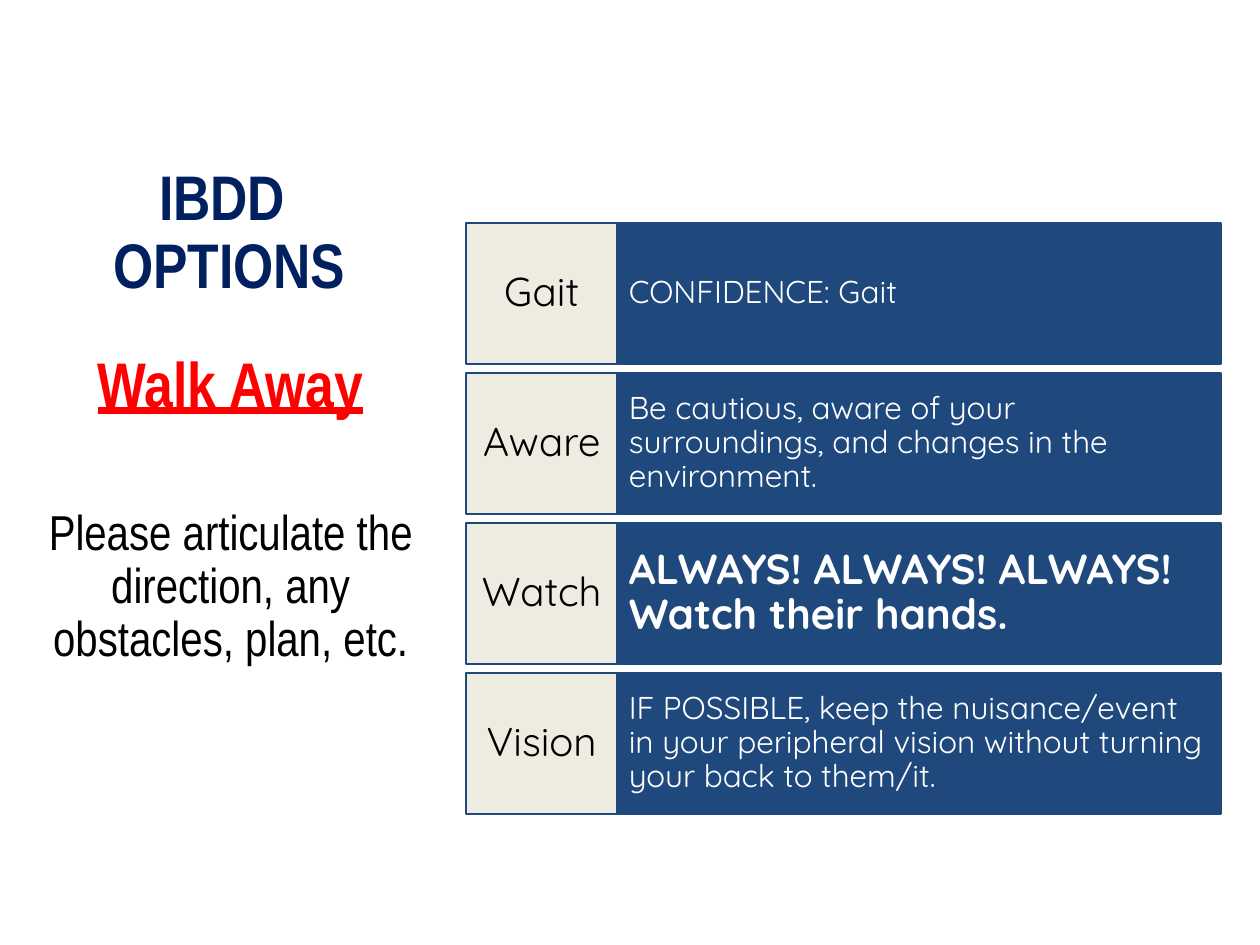
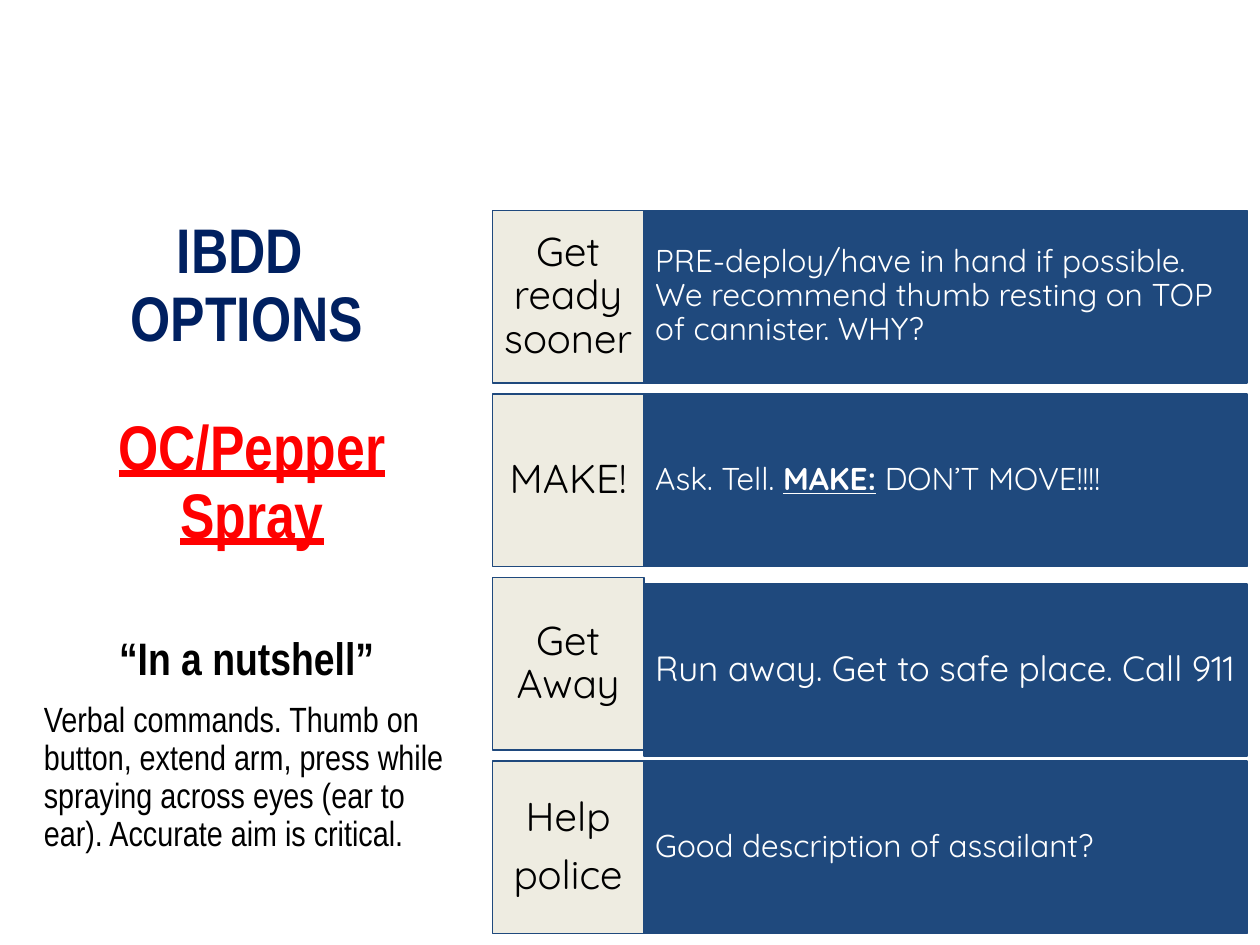
"""Build two slides of IBDD options, each with a heading panel and labelled rows."""
from dataclasses import dataclass

import pptx
import pptx.dml.color
import pptx.enum.shapes
import pptx.enum.text
import pptx.presentation
import pptx.shapes.autoshape
import pptx.slide
import pptx.text.text
import pptx.util

Inches = pptx.util.Inches
Pt = pptx.util.Pt
RGBColor = pptx.dml.color.RGBColor
ALIGN = pptx.enum.text.PP_ALIGN
ANCHOR = pptx.enum.text.MSO_ANCHOR

NAVY = RGBColor(0x00, 0x20, 0x60)
RED = RGBColor(0xFF, 0x00, 0x00)
BLUE = RGBColor(0x1F, 0x49, 0x7D)
CREAM = RGBColor(0xEE, 0xEC, 0xE1)
BLACK = RGBColor(0x00, 0x00, 0x00)
WHITE = RGBColor(0xFF, 0xFF, 0xFF)

PANEL_FONT = "Arial Narrow"
ROW_FONT = "Quicksand"
LABEL_WIDTH = 1.2
DETAIL_WIDTH = 4.79
LABEL_SIZE = 23
ROW_SPACE_AFTER = 8


@dataclass(frozen=True)
class Run:
    """A stretch of text with its emphasis."""
    text: str
    bold: bool = False
    underline: bool = False


@dataclass(frozen=True)
class Para:
    """A paragraph of the panel beside the rows."""
    run: Run
    size: float
    color: RGBColor = BLACK
    align: ALIGN = ALIGN.CENTER
    before: float = 0


@dataclass(frozen=True)
class Row:
    """A label tile with its detail tile."""
    label: tuple[str, ...]
    detail: tuple[Run, ...]
    size: float = 18
    detail_drop: float = 0


@dataclass(frozen=True)
class Box:
    """A place on the slide, in inches."""
    left: float
    top: float
    width: float
    height: float

    def lengths(self) -> tuple[pptx.util.Length, ...]:
        """Return the place as arguments for a new shape."""
        return tuple(Inches(v) for v in (self.left, self.top, self.width, self.height))


@dataclass(frozen=True)
class OptionSlide:
    """One option: title, panel and rows."""
    title_box: Box
    panel_box: Box
    panel_inset: float
    panel: tuple[Para, ...]
    rows_left: float
    first_top: float
    last_top: float
    row_height: float
    rows: tuple[Row, ...]


SLIDES = (
    OptionSlide(
        title_box=Box(0.53, 1.25, 2.58, 1.2),
        panel_box=Box(0.18, 2.75, 3.3, 4.05),
        panel_inset=0.05,
        panel=(
            Para(Run("Walk Away", bold=True, underline=True), 36, RED),
            Para(Run("Please articulate the direction, any obstacles, plan, etc."),
                 28, before=50),
        ),
        rows_left=3.7, first_top=1.77, last_top=5.34, row_height=1.12,
        rows=(
            Row(("Gait",), (Run("CONFIDENCE: Gait"),)),
            Row(("Aware",), (Run("Be cautious, aware of your surroundings, "
                                 "and changes in the environment."),)),
            Row(("Watch",), (Run("ALWAYS! ALWAYS! ALWAYS! Watch their hands.", bold=True),), 24),
            Row(("Vision",), (Run("IF POSSIBLE, keep the nuisance/event in your peripheral "
                                  "vision without turning your back to them/it."),)),
        ),
    ),
    OptionSlide(
        title_box=Box(0.67, 1.67, 2.58, 1.2),
        panel_box=Box(0.25, 1.17, 3.5, 6.06),
        panel_inset=2.13,
        panel=(
            Para(Run("OC/Pepper Spray", bold=True, underline=True), 36, RED),
            Para(Run("“In a nutshell” ", bold=True), 26, before=48),
            Para(Run("Verbal commands. Thumb on button, extend arm, press while spraying "
                     "across eyes (ear to ear). Accurate aim is critical."),
                 20, align=ALIGN.LEFT, before=10),
        ),
        rows_left=3.91, first_top=1.67, last_top=6.04, row_height=1.37,
        rows=(
            Row(("Get ready sooner",), (Run("PRE-deploy/have in hand if possible. We recommend "
                                            "thumb resting on TOP of cannister. WHY?"),)),
            Row(("MAKE!",), (Run("Ask. Tell. "), Run("MAKE:", bold=True, underline=True),
                             Run(" DON’T MOVE!!!!"))),
            Row(("Get Away",), (Run("Run away. Get to safe place. Call 911"),), 20, 0.05),
            Row(("Help", "police"), (Run("Good description of assailant?"),)),
        ),
    ),
)


def add_run(p: pptx.text.text._Paragraph, run: Run, font: str, size: float,
            color: RGBColor) -> None:
    """Add one formatted run to a paragraph."""
    r = p.add_run()
    r.text = run.text
    r.font.name = font
    r.font.size = Pt(size)
    r.font.bold = run.bold
    r.font.underline = run.underline
    r.font.color.rgb = color


def next_paragraph(tf: pptx.text.text.TextFrame, index: int,
                   align: ALIGN) -> pptx.text.text._Paragraph:
    """Return the paragraph at this index with the shared line spacing."""
    p = tf.add_paragraph() if index else tf.paragraphs[0]
    p.alignment = align
    p.line_spacing = 0.9
    return p


def add_text_box(s: pptx.slide.Slide, box: Box, anchor: ANCHOR) -> pptx.text.text.TextFrame:
    """Add a wrapping text box and return its text frame."""
    tf = s.shapes.add_textbox(*box.lengths()).text_frame
    tf.word_wrap = True
    tf.vertical_anchor = anchor
    return tf


def add_title(s: pptx.slide.Slide, box: Box) -> None:
    """Add the two-line title that every option shares."""
    p = next_paragraph(add_text_box(s, box, ANCHOR.BOTTOM), 0, ALIGN.CENTER)
    add_run(p, Run("IBDD ", bold=True), PANEL_FONT, 36, NAVY)
    p.add_line_break()
    add_run(p, Run("OPTIONS", bold=True), PANEL_FONT, 36, NAVY)


def add_panel(s: pptx.slide.Slide, option: OptionSlide) -> None:
    """Add the option name and its notes."""
    tf = add_text_box(s, option.panel_box, ANCHOR.TOP)
    tf.margin_top = Inches(option.panel_inset)
    for i, para in enumerate(option.panel):
        p = next_paragraph(tf, i, para.align)
        p.space_before = Pt(para.before)
        add_run(p, para.run, PANEL_FONT, para.size, para.color)


def add_tile(s: pptx.slide.Slide, box: Box, fill: RGBColor, inset_x: float,
             inset_y: float) -> pptx.text.text.TextFrame:
    """Add a filled rectangle and return its text frame."""
    sp = s.shapes.add_shape(pptx.enum.shapes.MSO_SHAPE.RECTANGLE, *box.lengths())
    sp.shadow.inherit = False
    sp.fill.solid()
    sp.fill.fore_color.rgb = fill
    sp.line.color.rgb = BLUE
    sp.line.width = Pt(1)
    tf = sp.text_frame
    tf.word_wrap = True
    tf.vertical_anchor = ANCHOR.MIDDLE
    tf.margin_left = tf.margin_right = Inches(inset_x)
    tf.margin_top = tf.margin_bottom = Inches(inset_y)
    return tf


def add_row(s: pptx.slide.Slide, row: Row, left: float, top: float, height: float) -> None:
    """Add a detail tile and the label tile to its left."""
    detail_box = Box(left + LABEL_WIDTH, top + row.detail_drop, DETAIL_WIDTH, height)
    p = next_paragraph(add_tile(s, detail_box, BLUE, 0.09, height / 4), 0, ALIGN.LEFT)
    p.space_after = Pt(ROW_SPACE_AFTER)
    for run in row.detail:
        add_run(p, run, ROW_FONT, row.size, WHITE)
    tf = add_tile(s, Box(left, top, LABEL_WIDTH, height), CREAM, 0.06, height / 10)
    for i, line in enumerate(row.label):
        p = next_paragraph(tf, i, ALIGN.CENTER)
        p.space_after = Pt(ROW_SPACE_AFTER)
        add_run(p, Run(line), ROW_FONT, LABEL_SIZE, BLACK)


def add_option(prs: pptx.presentation.Presentation, option: OptionSlide) -> None:
    """Add one option slide."""
    s = prs.slides.add_slide(prs.slide_layouts[6])
    add_title(s, option.title_box)
    add_panel(s, option)
    pitch = (option.last_top - option.first_top) / (len(option.rows) - 1)
    for i, row in enumerate(option.rows):
        add_row(s, row, option.rows_left, option.first_top + i * pitch, option.row_height)


def main() -> None:
    """Build and save the presentation."""
    prs = pptx.Presentation()
    prs.slide_width = Inches(10)
    prs.slide_height = Inches(7.5)
    for option in SLIDES:
        add_option(prs, option)
    prs.save("out.pptx")


if __name__ == "__main__":
    main()
